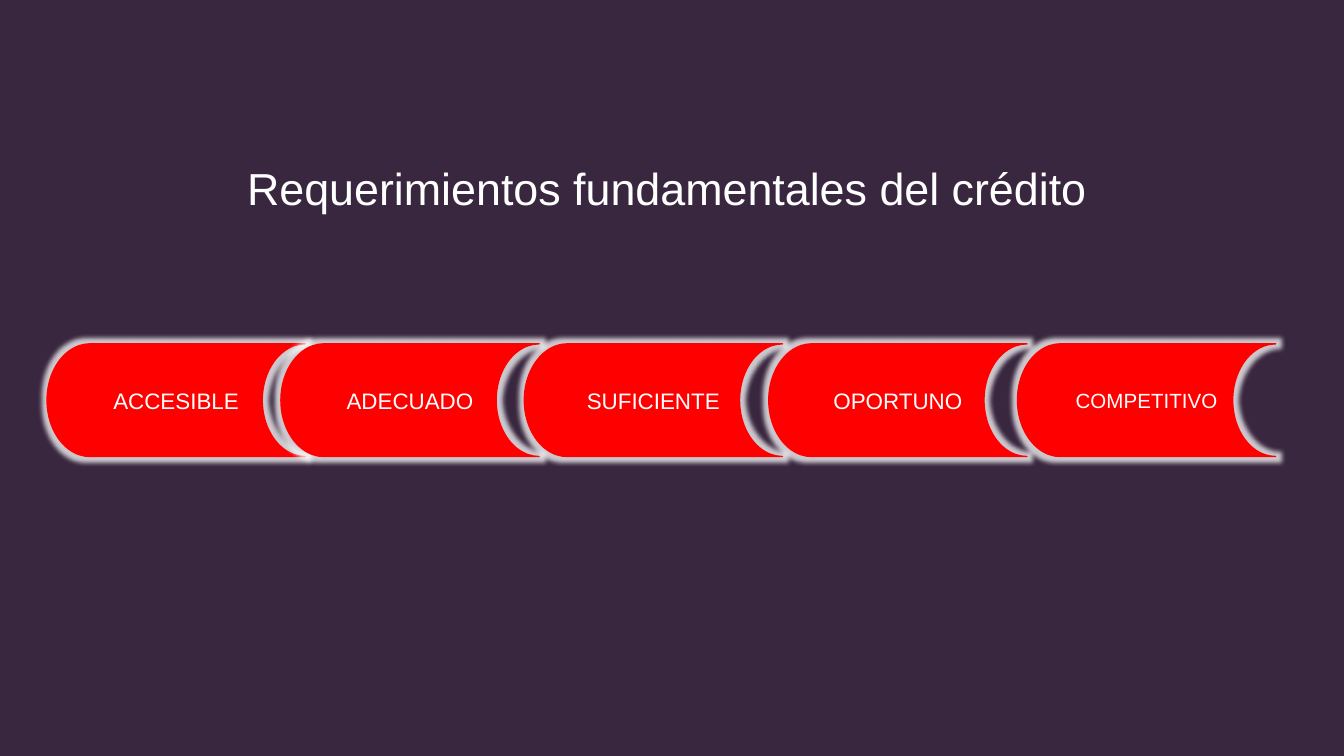
import pptx
import pptx.util
import pptx.dml.color
import pptx.enum.shapes
import pptx.enum.text
import pptx.oxml
import pptx.oxml.ns

Cm = pptx.util.Cm
Pt = pptx.util.Pt
RGBColor = pptx.dml.color.RGBColor

BACKGROUND = RGBColor(0x39, 0x27, 0x3F)
RED = RGBColor(0xFF, 0x00, 0x00)
WHITE = RGBColor(0xFF, 0xFF, 0xFF)

FONT = "Arial"
STEP_TOP, STEP_WIDTH, STEP_HEIGHT = Cm(6.5), Cm(4.88), Cm(2.13)

# Label, left edge in centimetres, text size in points
STEPS = [
    ("ACCESIBLE", 0.89, 12),
    ("ADECUADO", 5.31, 12),
    ("SUFICIENTE", 9.91, 12),
    ("OPORTUNO", 14.53, 12),
    ("COMPETITIVO", 19.23, 11),
]


def add_run(paragraph, text, size):
    run = paragraph.add_run()
    run.text = text
    run.font.name = FONT
    run.font.size = Pt(size)
    run.font.color.rgb = WHITE


def add_glow(shape, color, radius, opacity):
    """Put a soft glow around the shape; opacity is a percentage."""
    shape.shadow.inherit = False
    effects = shape._element.spPr.find(pptx.oxml.ns.qn("a:effectLst"))
    effects.append(pptx.oxml.parse_xml(
        f'<a:glow {pptx.oxml.ns.nsdecls("a")} rad="{radius}">'
        f'<a:srgbClr val="{color}"><a:alpha val="{opacity * 1000}"/></a:srgbClr>'
        '</a:glow>'))


def add_step(group, label, left, size):
    shape = group.shapes.add_shape(
        pptx.enum.shapes.MSO_SHAPE.FLOWCHART_STORED_DATA,
        left, STEP_TOP, STEP_WIDTH, STEP_HEIGHT)
    shape.fill.solid()
    shape.fill.fore_color.rgb = RED
    shape.line.color.rgb = RED
    shape.line.width = Pt(0.75)
    add_glow(shape, WHITE, Pt(5), 75)

    frame = shape.text_frame
    frame.word_wrap = True
    frame.margin_left = frame.margin_right = 0
    frame.vertical_anchor = pptx.enum.text.MSO_ANCHOR.MIDDLE
    paragraph = frame.paragraphs[0]
    paragraph.alignment = pptx.enum.text.PP_ALIGN.CENTER
    add_run(paragraph, label, size)


def add_title(group, text):
    box = group.shapes.add_textbox(Cm(4.42), Cm(2.92), Cm(16.54), Cm(1.27))
    frame = box.text_frame
    frame.word_wrap = False
    frame.auto_size = pptx.enum.text.MSO_AUTO_SIZE.SHAPE_TO_FIT_TEXT
    paragraph = frame.paragraphs[0]
    paragraph.alignment = pptx.enum.text.PP_ALIGN.LEFT
    add_run(paragraph, text, 24)


def main():
    presentation = pptx.Presentation()
    presentation.slide_width = Cm(25.4)
    presentation.slide_height = Cm(14.29)
    slide = presentation.slides.add_slide(presentation.slide_layouts[6])
    slide.background.fill.solid()
    slide.background.fill.fore_color.rgb = BACKGROUND

    # Chain of requirements, each overlapping the one before, with its title
    group = slide.shapes.add_group_shape()
    for label, left, size in STEPS:
        add_step(group, label, Cm(left), size)
    add_title(group, "Requerimientos fundamentales del crédito")

    presentation.save("out.pptx")


if __name__ == "__main__":
    main()
